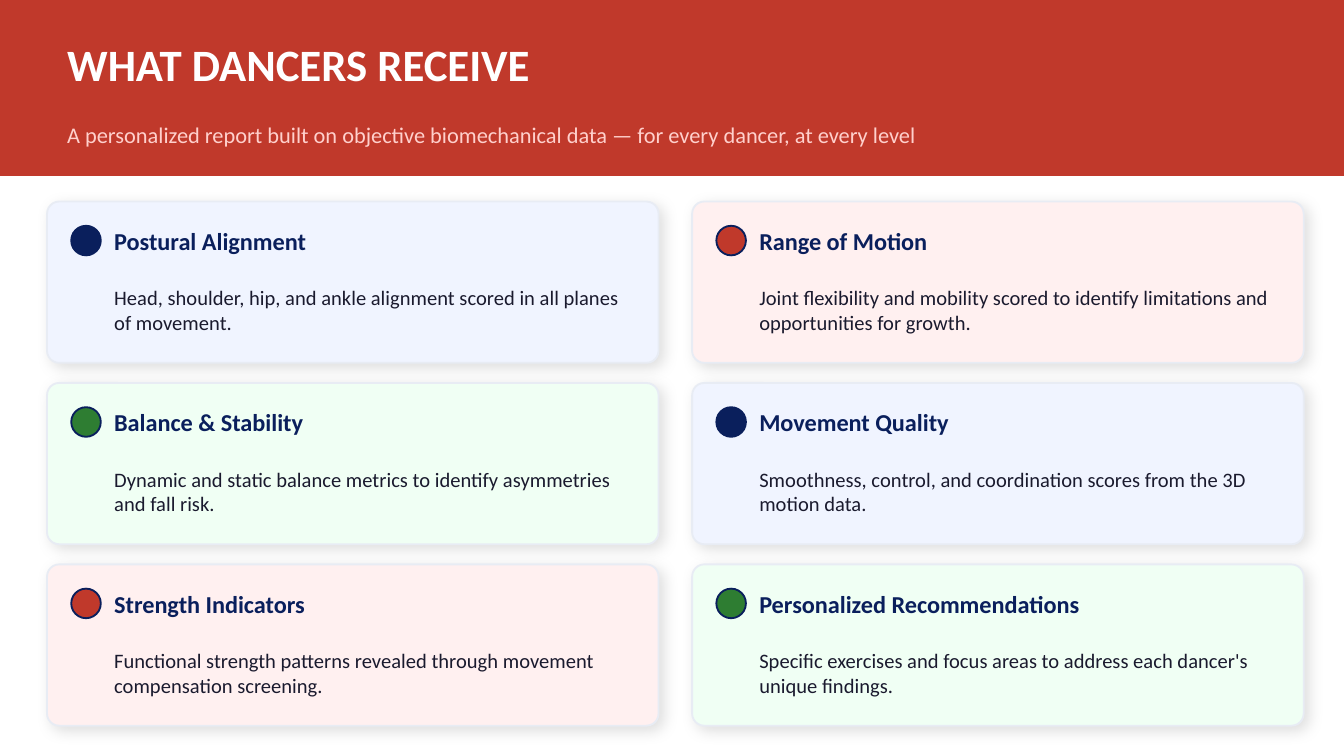
from pptx import Presentation
from pptx import util as u
from pptx.dml.color import RGBColor
from pptx.enum import shapes, text
from pptx.oxml import parse_xml
from pptx.oxml.ns import nsdecls, qn

PX = 9144  # 100 px to the inch
COLORS = {
    "red": "C0392B", "navy": "0A1F5C", "green": "2E7D32",
    "pale red": "FFF0F0", "pale navy": "F0F4FF", "pale green": "F0FFF4",
    "white": "FFFFFF", "blush": "FFD0CC", "ink": "1A1A2E", "border": "E8ECF4",
}
FORMATS = {
    "title": ({"size": u.Pt(24), "bold": True}, "white"),
    "subtitle": ({"size": u.Pt(12), "bold": False}, "blush"),
    "heading": ({"size": u.Pt(13), "bold": True}, "navy"),
    "body": ({"size": u.Pt(11), "bold": False}, "ink"),
}
SHADOW = f"""<a:outerShdw {nsdecls('a')} blurRad="{u.Pt(8)}" dist="{u.Pt(3)}"
    dir="2700000" algn="bl" rotWithShape="0">
  <a:srgbClr val="000000"><a:alpha val="12000"/></a:srgbClr>
</a:outerShdw>"""

# Widescreen slide, 16:9
presentation = Presentation()
presentation.slide_width = 1000 * PX
presentation.slide_height = 1000 * PX * 9 // 16
slide = presentation.slides.add_slide(presentation.slide_layouts[6])
slide.background.fill.solid()
slide.background.fill.fore_color.rgb = RGBColor.from_string(COLORS["white"])


def add_shape(kind, box, fill, line):
    shape = slide.shapes.add_shape(kind, *(value * PX for value in box))
    shape.shadow.inherit = False
    shape.fill.solid()
    shape.fill.fore_color.rgb = RGBColor.from_string(COLORS[fill])
    shape.line.color.rgb = RGBColor.from_string(COLORS[line])
    shape.line.width = u.Pt(1)
    return shape


def add_text(words, box, style):
    frame = slide.shapes.add_textbox(*(value * PX for value in box)).text_frame
    frame.word_wrap = True
    frame.vertical_anchor = text.MSO_ANCHOR.MIDDLE
    for side in ("left", "top", "right", "bottom"):
        setattr(frame, f"margin_{side}", 0)
    run = frame.paragraphs[0].add_run()
    run.text = words
    values, color = FORMATS[style]
    for name, value in {"name": "Calibri", **values}.items():
        setattr(run.font, name, value)
    run.font.color.rgb = RGBColor.from_string(COLORS[color])


# Header band
add_shape(shapes.MSO_SHAPE.RECTANGLE, (0, 0, 1000, 130), "red", "red")
add_text("WHAT DANCERS RECEIVE", (50, 15, 900, 65), "title")
add_text("A personalized report built on objective biomechanical data — "
         "for every dancer, at every level", (50, 82, 900, 36), "subtitle")

# Report cards, two to a row
CARDS = [
    ("Postural Alignment", "navy",
     "Head, shoulder, hip, and ankle alignment scored in all planes of movement."),
    ("Range of Motion", "red",
     "Joint flexibility and mobility scored to identify limitations and opportunities for growth."),
    ("Balance & Stability", "green",
     "Dynamic and static balance metrics to identify asymmetries and fall risk."),
    ("Movement Quality", "navy",
     "Smoothness, control, and coordination scores from the 3D motion data."),
    ("Strength Indicators", "red",
     "Functional strength patterns revealed through movement compensation screening."),
    ("Personalized Recommendations", "green",
     "Specific exercises and focus areas to address each dancer's unique findings."),
]
for index, (heading, color, body) in enumerate(CARDS):
    row, column = divmod(index, 2)
    left, top = 35 + column * 480, 150 + row * 135
    card = add_shape(shapes.MSO_SHAPE.ROUNDED_RECTANGLE, (left, top, 455, 120),
                     f"pale {color}", "border")
    card.adjustments[0] = 0.075
    card._element.spPr.find(qn("a:effectLst")).append(parse_xml(SHADOW))
    add_shape(shapes.MSO_SHAPE.OVAL, (left + 18, top + 18, 22, 22), color, "navy")
    add_text(heading, (left + 50, top + 10, 390, 38), "heading")
    add_text(body, (left + 50, top + 48, 390, 65), "body")

presentation.save("out.pptx")
